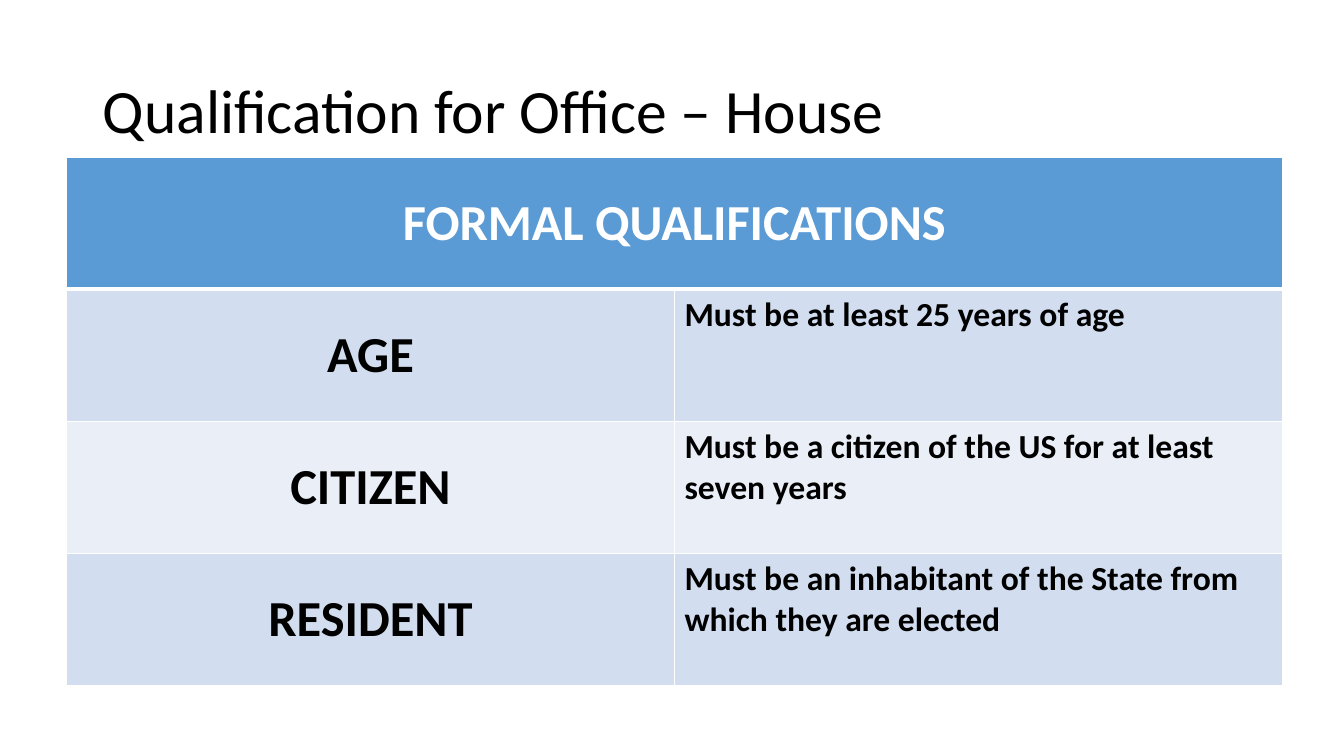
from dataclasses import dataclass

import pptx
import pptx.dml.color
import pptx.enum.text
import pptx.oxml
import pptx.oxml.ns
import pptx.presentation
import pptx.slide
import pptx.table
import pptx.text.text
import pptx.util

WIDTH, HEIGHT = 13.33, 7.5
COLUMN, ROW = 6.03, 1.31
FONT = "Calibri"
BLACK, WHITE, BLUE = "000000", "FFFFFF", "5B9BD5"
BANDS = ("D2DEEF", "EAEFF7")
THIN, THICK = 1, 3

ALIGN = pptx.enum.text.PP_ALIGN
ANCHOR = pptx.enum.text.MSO_ANCHOR


@dataclass(frozen=True)
class Qualification:
    name: str
    rule: str


@dataclass(frozen=True)
class CellStyle:
    size: int
    color: str
    align: ALIGN
    anchor: ANCHOR


HEADING = CellStyle(36, WHITE, ALIGN.CENTER, ANCHOR.MIDDLE)
NAME = CellStyle(36, BLACK, ALIGN.CENTER, ANCHOR.MIDDLE)
RULE = CellStyle(24, BLACK, ALIGN.LEFT, ANCHOR.TOP)

QUALIFICATIONS = (
    Qualification("AGE", "Must be at least 25 years of age"),
    Qualification("CITIZEN", "Must be a citizen of the US for at least seven years"),
    Qualification("RESIDENT", "Must be an inhabitant of the State from which they are elected"),
)


def rgb(color: str) -> pptx.dml.color.RGBColor:
    return pptx.dml.color.RGBColor.from_string(color)


def set_font(p: pptx.text.text._Paragraph, size: int, color: str, bold: bool) -> None:
    p.font.name = FONT
    p.font.size = pptx.util.Pt(size)
    p.font.bold = bold
    p.font.color.rgb = rgb(color)


def set_borders(cell: pptx.table._Cell, top: int, bottom: int) -> None:
    """Draw white cell borders; call before setting the fill, which must follow them."""
    tc_pr = cell._tc.get_or_add_tcPr()
    for side, width in (("L", THIN), ("R", THIN), ("T", top), ("B", bottom)):
        tc_pr.append(pptx.oxml.parse_xml(
            f'<a:ln{side} {pptx.oxml.ns.nsdecls("a")} w="{pptx.util.Pt(width)}">'
            f'<a:solidFill><a:srgbClr val="{WHITE}"/></a:solidFill></a:ln{side}>'
        ))


def format_cell(cell: pptx.table._Cell, fill: str, top: int, bottom: int) -> None:
    set_borders(cell, top, bottom)
    cell.fill.solid()
    cell.fill.fore_color.rgb = rgb(fill)


def write_cell(cell: pptx.table._Cell, text: str, style: CellStyle) -> None:
    cell.text = text
    cell.vertical_anchor = style.anchor
    p = cell.text_frame.paragraphs[0]
    p.alignment = style.align
    set_font(p, style.size, style.color, bold=True)


def add_title(s: pptx.slide.Slide, text: str) -> None:
    sp = s.shapes.title
    sp.left, sp.top, sp.width, sp.height = map(pptx.util.Inches, (0.92, 0.4, 11.5, 1.45))
    tf = sp.text_frame
    tf.text = text
    tf.vertical_anchor = ANCHOR.MIDDLE
    p = tf.paragraphs[0]
    p.alignment = ALIGN.LEFT
    p.line_spacing = 0.9
    set_font(p, 44, BLACK, bold=False)


def add_qualifications(s: pptx.slide.Slide, heading: str) -> None:
    rows = len(QUALIFICATIONS) + 1
    table = s.shapes.add_table(
        rows, 2, *map(pptx.util.Inches, (0.66, 1.56, 2 * COLUMN, rows * ROW))
    ).table

    for cell in table.rows[0].cells:
        format_cell(cell, BLUE, THIN, THICK)
    table.cell(0, 0).merge(table.cell(0, 1))
    write_cell(table.cell(0, 0), heading, HEADING)

    for i, qualification in enumerate(QUALIFICATIONS):
        name, rule = table.rows[i + 1].cells
        for cell in (name, rule):
            format_cell(cell, BANDS[i % 2], THIN if i else THICK, THIN)
        write_cell(name, qualification.name, NAME)
        write_cell(rule, qualification.rule, RULE)


def main() -> None:
    prs = pptx.Presentation()
    prs.slide_width = pptx.util.Inches(WIDTH)
    prs.slide_height = pptx.util.Inches(HEIGHT)
    s = prs.slides.add_slide(prs.slide_layouts.get_by_name("Title Only"))
    add_title(s, "Qualification for Office – House")
    add_qualifications(s, "FORMAL QUALIFICATIONS")
    prs.save("out.pptx")


if __name__ == "__main__":
    main()
